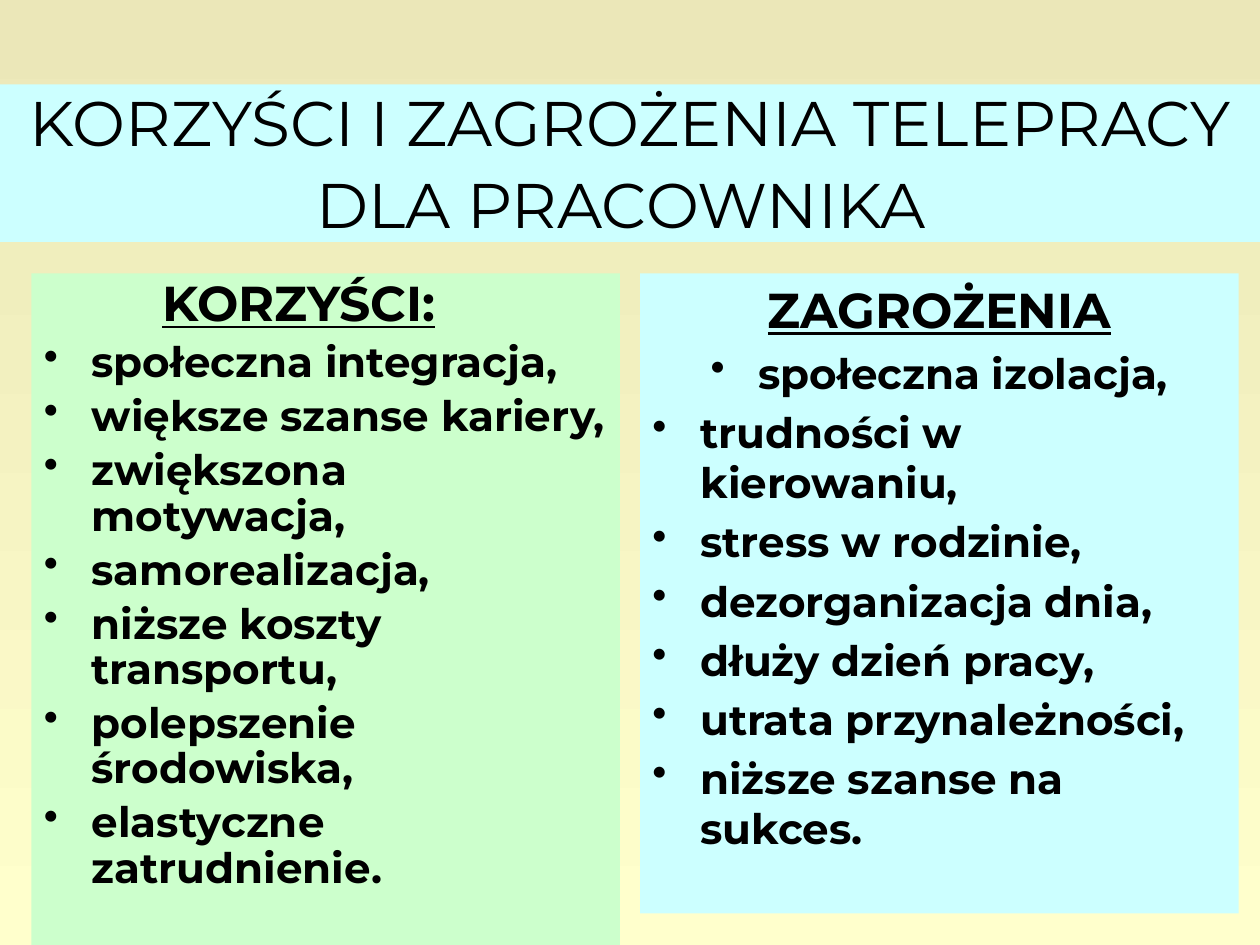
from dataclasses import dataclass

from lxml import etree
from pptx import Presentation
from pptx.dml.color import RGBColor
from pptx.enum.text import MSO_ANCHOR, MSO_AUTO_SIZE, PP_ALIGN
from pptx.oxml.ns import qn
from pptx.util import Inches, Pt

LEFT, CENTER = PP_ALIGN.LEFT, PP_ALIGN.CENTER
TOP, MIDDLE = MSO_ANCHOR.TOP, MSO_ANCHOR.MIDDLE
NO_FIT = MSO_AUTO_SIZE.NONE
TITLE_ONLY = 5


@dataclass(frozen=True)
class Theme:
    font: str = "Montserrat"
    ink: str = "000000"
    aqua: str = "CCFFFF"
    mint: str = "CCFFCC"
    sky: str = "EBE7B8"
    base: str = "FFFFCC"
    title: int = 36
    gap: int = 40  # space that closes the title
    head: int = 28
    item: int = 24
    before: int = 5


@dataclass(frozen=True)
class Box:
    x: float
    y: float
    w: float
    h: float


@dataclass(frozen=True)
class Line:
    text: str
    size: int
    align: PP_ALIGN = LEFT
    margin: float = 0.38
    indent: float = -0.38
    bullet: bool = True
    under: bool = False


@dataclass(frozen=True)
class Panel:
    box: Box
    fill: str
    pitch: float
    lines: list[Line]


THEME = Theme()


def items(*texts: str) -> list[Line]:
    return [Line(text, THEME.item) for text in texts]


PANELS = [
    Panel(Box(0.25, 2.17, 4.67, 5.33), THEME.mint, 0.9, [
        Line("KORZYŚCI:", THEME.head, margin=0.94, indent=0,
             bullet=False, under=True),
        *items("społeczna integracja,", "większe szanse kariery,",
               "zwiększona motywacja,", "samorealizacja,",
               "niższe koszty transportu,", "polepszenie środowiska,",
               "elastyczne zatrudnienie."),
    ]),
    Panel(Box(5.08, 2.17, 4.75, 5.08), THEME.aqua, 1.0, [
        Line("ZAGROŻENIA", THEME.head, CENTER, bullet=False, under=True),
        Line("społeczna izolacja,", THEME.item, CENTER),
        *items("trudności w kierowaniu,", "stress w rodzinie,",
               "dezorganizacja dnia,", "dłuży dzień pracy,",
               "utrata przynależności,", "niższe szanse na sukces."),
    ]),
]


def apply(target, values: dict) -> None:
    for name, value in values.items():
        setattr(target, name, value)


def paint(fill, color: str) -> None:
    fill.solid()
    fill.fore_color.rgb = RGBColor.from_string(color)


def place(shape, box: Box, color: str, anchor: MSO_ANCHOR) -> None:
    apply(shape, {"left": Inches(box.x), "top": Inches(box.y),
                  "width": Inches(box.w), "height": Inches(box.h)})
    apply(shape.text_frame, {"word_wrap": True, "auto_size": NO_FIT,
                             "vertical_anchor": anchor})
    paint(shape.fill, color)


def add_run(para, text: str, size: int, bold: bool = False,
            under: bool = False) -> None:
    run = para.add_run()
    run.text = text
    apply(run.font, {"name": THEME.font, "size": Pt(size),
                     "bold": bold, "underline": under})
    run.font.color.rgb = RGBColor.from_string(THEME.ink)


def add_line(para, line: Line, pitch: float) -> None:
    apply(para, {"alignment": line.align, "line_spacing": pitch,
                 "space_before": Pt(THEME.before)})
    props = para._p.get_or_add_pPr()
    props.set("marL", str(Inches(line.margin)))
    props.set("indent", str(Inches(line.indent)))
    if line.bullet:
        etree.SubElement(props, qn("a:buChar")).set("char", "•")
    add_run(para, line.text, line.size, True, line.under)


def add_panel(slide, panel: Panel) -> None:
    shape = slide.shapes.add_textbox(0, 0, 0, 0)
    place(shape, panel.box, panel.fill, TOP)
    frame = shape.text_frame
    for i, line in enumerate(panel.lines):
        para = frame.add_paragraph() if i else frame.paragraphs[0]
        add_line(para, line, panel.pitch)


def main() -> None:
    deck = Presentation()
    apply(deck, {"slide_width": Inches(10), "slide_height": Inches(7.5)})
    slide = deck.slides.add_slide(deck.slide_layouts[TITLE_ONLY])

    # Background, darker at the top
    fill = slide.background.fill
    fill.gradient()
    fill.gradient_angle = 270
    for stop, color in zip(fill.gradient_stops, (THEME.sky, THEME.base)):
        stop.color.rgb = RGBColor.from_string(color)

    # Title band
    title = slide.shapes.title
    place(title, Box(0, 0.67, 10, 1.25), THEME.aqua, MIDDLE)
    para = title.text_frame.paragraphs[0]
    para.alignment = CENTER
    add_run(para, "KORZYŚCI I ZAGROŻENIA TELEPRACY DLA PRACOWNIKA", THEME.title)
    add_run(para, " ", THEME.gap)

    # Benefits and threats
    for panel in PANELS:
        add_panel(slide, panel)

    deck.save("out.pptx")


if __name__ == "__main__":
    main()
